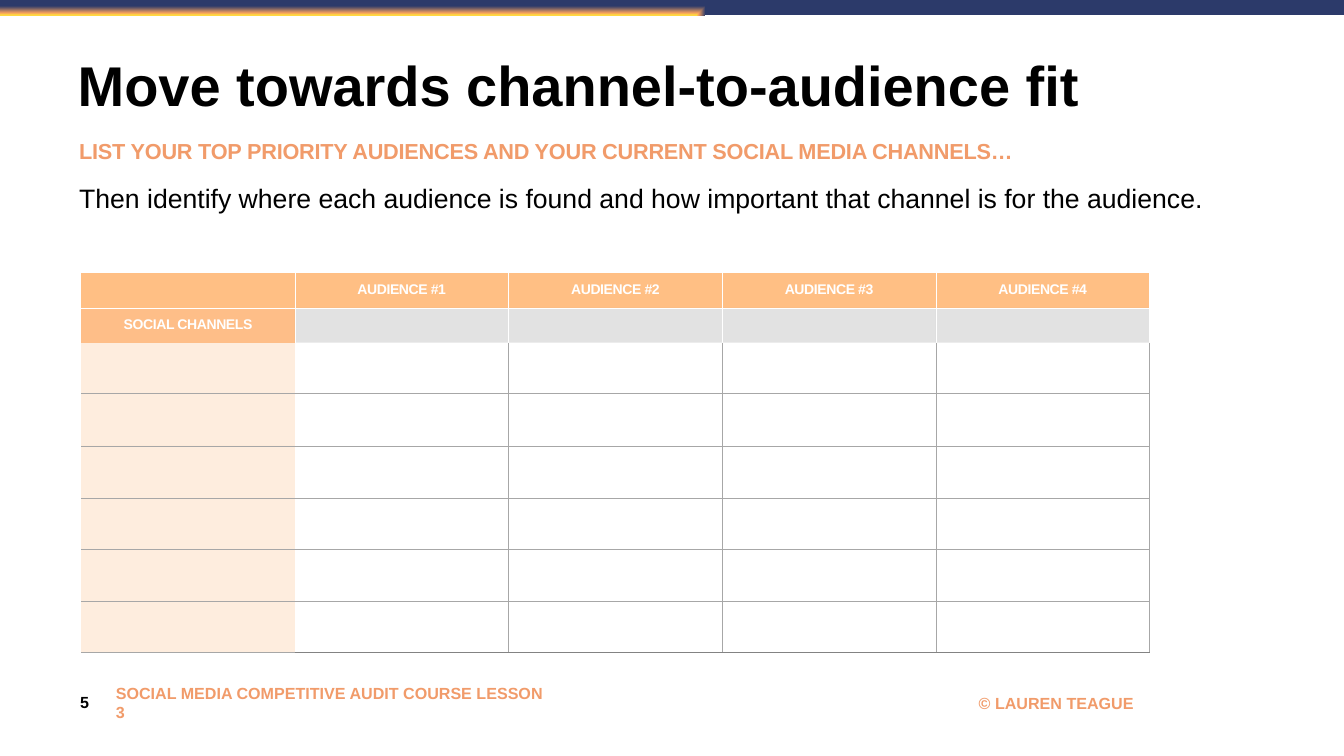
from dataclasses import dataclass

from lxml.etree import SubElement
from pptx import Presentation
from pptx.dml.color import RGBColor
from pptx.enum.shapes import MSO_SHAPE
from pptx.enum.text import MSO_ANCHOR, PP_ALIGN
from pptx.oxml import parse_xml
from pptx.oxml.ns import nsdecls, qn
from pptx.util import Inches, Pt

WIDTH, HEIGHT = Inches(26.67), Inches(15)
FONT = "Arial"
BLACK, WHITE, CORAL = "000000", "FFFFFF", "F19B6A"
PEACH, SOFT_PEACH, GREY, DARK_GREY = "FFBF84", "FEBE88", "A7A7A7", "838383"
NO_STYLE = "{2D5ABB26-0587-4C30-8999-92F81FD0307C}"
AUDIENCES = 4
COLUMN_WIDTH = 15.9
ROW_HEIGHTS = [4.6, 4.6, 6.73, 6.93, 6.93, 6.73, 6.93, 6.73]
LAST_ROW = len(ROW_HEIGHTS) - 1


@dataclass
class Area:
    left: float
    top: float
    width: float
    height: float

    def lengths(self) -> tuple[int, int, int, int]:
        return across(self.left), down(self.top), across(self.width), down(self.height)


@dataclass
class Line:
    text: str
    size: float
    color: str
    bold: bool = True
    line_spacing: float = 1.0
    space_before: float = 0
    tracking: float = 0
    align: PP_ALIGN = PP_ALIGN.LEFT


@dataclass
class TextBlock:
    area: Area
    lines: list[Line]
    inset: float = 0.08
    anchor: MSO_ANCHOR = MSO_ANCHOR.TOP


BLOCKS = [
    TextBlock(Area(8.32, 91.2, 33.41, 3.47),
              [Line("SOCIAL MEDIA COMPETITIVE AUDIT COURSE LESSON 3", 23, CORAL)],
              anchor=MSO_ANCHOR.MIDDLE),
    TextBlock(Area(72.52, 91.2, 12.49, 3.47),
              [Line("© LAUREN TEAGUE", 23, CORAL)], anchor=MSO_ANCHOR.MIDDLE),
    TextBlock(Area(5.59, 8.13, 90.89, 11.07),
              [Line("Move towards channel-to-audience fit", 80, BLACK, line_spacing=0.8)],
              inset=0.05),
    TextBlock(Area(5.59, 18.13, 90.89, 22.8), [
        Line("LIST YOUR TOP PRIORITY AUDIENCES AND YOUR CURRENT SOCIAL MEDIA CHANNELS…",
             31, CORAL, line_spacing=0.9, tracking=-0.3),
        Line("Then identify where each audience is found and how important that channel "
             "is for the audience.", 38, BLACK, bold=False, line_spacing=0.9, space_before=30),
    ]),
    TextBlock(Area(5.66, 91.07, 2.74, 3.47), [Line("5", 23, BLACK)],
              anchor=MSO_ANCHOR.MIDDLE),
]


def across(percent: float) -> int:
    return round(WIDTH * percent / 100)


def down(percent: float) -> int:
    return round(HEIGHT * percent / 100)


def rgb(color: str) -> RGBColor:
    return RGBColor.from_string(color)


def write_line(paragraph, line: Line) -> None:
    span = paragraph.add_run()
    span.text = line.text
    paragraph.alignment = line.align
    paragraph.line_spacing = line.line_spacing
    if line.space_before:
        paragraph.space_before = Pt(line.space_before)
    font = paragraph.font
    font.name, font.size, font.bold = FONT, Pt(line.size), line.bold
    font.color.rgb = rgb(line.color)
    if line.tracking:
        span.font._element.set("spc", str(round(line.tracking * 100)))


def draw_text(page, block: TextBlock) -> None:
    frame = page.shapes.add_textbox(*block.area.lengths()).text_frame
    frame.word_wrap = True
    frame.vertical_anchor = block.anchor
    frame.margin_left = frame.margin_right = Inches(block.inset)
    frame.margin_top = frame.margin_bottom = Inches(block.inset)
    for index, line in enumerate(block.lines):
        write_line(frame.add_paragraph() if index else frame.paragraphs[0], line)


def draw_top_bar(page) -> None:
    bar = page.shapes.add_shape(MSO_SHAPE.RECTANGLE, *Area(-0.34, -0.53, 100.64, 2.53).lengths())
    bar.shadow.inherit = False
    bar.line.fill.background()
    stops = "".join(
        f'<a:gs pos="{share * 1000}"><a:srgbClr val="{color}"/></a:gs>'
        for share, color in [(0, "FFD840"), (20, "F7A05D"), (93, "2C3A6A")])
    gradient = parse_xml(
        f'<a:gradFill {nsdecls("a")} rotWithShape="1"><a:gsLst>{stops}</a:gsLst>'
        '<a:path path="shape"><a:fillToRect l="6000" t="99000" r="94000" b="1000"/></a:path>'
        '</a:gradFill>')
    bar._element.spPr.find(qn("a:prstGeom")).addnext(gradient)


def fill_cell(cell, row: int, column: int) -> None:
    if row > 1 and column > 0:
        cell.fill.background()
        return
    color, opacity = PEACH, 100
    if row == 1:
        color, opacity = (GREY, 32) if column else (SOFT_PEACH, 100)
    elif row > 1:
        color, opacity = SOFT_PEACH, 27
    cell.fill.solid()
    cell.fill.fore_color.rgb = rgb(color)
    if opacity < 100:
        shade = cell._tc.tcPr.find(".//" + qn("a:srgbClr"))
        SubElement(shade, qn("a:alpha"), val=str(opacity * 1000))


def vertical_edge(row: int, edge: int) -> str | None:
    if edge == 0:
        return None
    return WHITE if row < 2 or edge == 1 else GREY


def horizontal_edge(edge: int, column: int) -> str | None:
    if edge in (0, 2):
        return None
    if edge == 1:
        return WHITE
    return DARK_GREY if edge > LAST_ROW and column else GREY


def border_cell(cell, row: int, column: int) -> None:
    edges = {"lnL": vertical_edge(row, column), "lnR": vertical_edge(row, column + 1),
             "lnT": horizontal_edge(row, column), "lnB": horizontal_edge(row + 1, column)}
    for index, (side, color) in enumerate(edges.items()):
        paint = (f'<a:solidFill><a:srgbClr val="{color}"/></a:solidFill>'
                 if color else "<a:noFill/>")
        cell._tc.tcPr.insert(index, parse_xml(
            f'<a:{side} {nsdecls("a")} w="{Pt(1)}">{paint}</a:{side}>'))


def draw_audience_table(page) -> None:
    columns = AUDIENCES + 1
    area = Area(6.04, 36.13, COLUMN_WIDTH * columns, sum(ROW_HEIGHTS))
    table = page.shapes.add_table(len(ROW_HEIGHTS), columns, *area.lengths()).table
    table._tbl.tblPr.find(qn("a:tableStyleId")).text = NO_STYLE
    for column in table.columns:
        column.width = across(COLUMN_WIDTH)
    for row, height in zip(table.rows, ROW_HEIGHTS):
        row.height = down(height)
    labels = {(0, number): f"AUDIENCE #{number}" for number in range(1, columns)}
    labels[1, 0] = "SOCIAL CHANNELS"
    for row in range(len(ROW_HEIGHTS)):
        for column in range(columns):
            cell = table.cell(row, column)
            fill_cell(cell, row, column)
            border_cell(cell, row, column)
            if (row, column) in labels:
                cell.vertical_anchor = MSO_ANCHOR.MIDDLE
                cell.margin_left = cell.margin_right = Inches(0.06)
                cell.margin_top = cell.margin_bottom = Inches(0.06)
                write_line(cell.text_frame.paragraphs[0],
                           Line(labels[row, column], 20, WHITE, line_spacing=0.8,
                                tracking=-0.6, align=PP_ALIGN.CENTER))


def main() -> None:
    deck = Presentation()
    deck.slide_width, deck.slide_height = WIDTH, HEIGHT
    page = deck.slides.add_slide(deck.slide_layouts[6])
    draw_top_bar(page)
    for block in BLOCKS:
        draw_text(page, block)
    draw_audience_table(page)
    deck.save("out.pptx")


if __name__ == "__main__":
    main()
